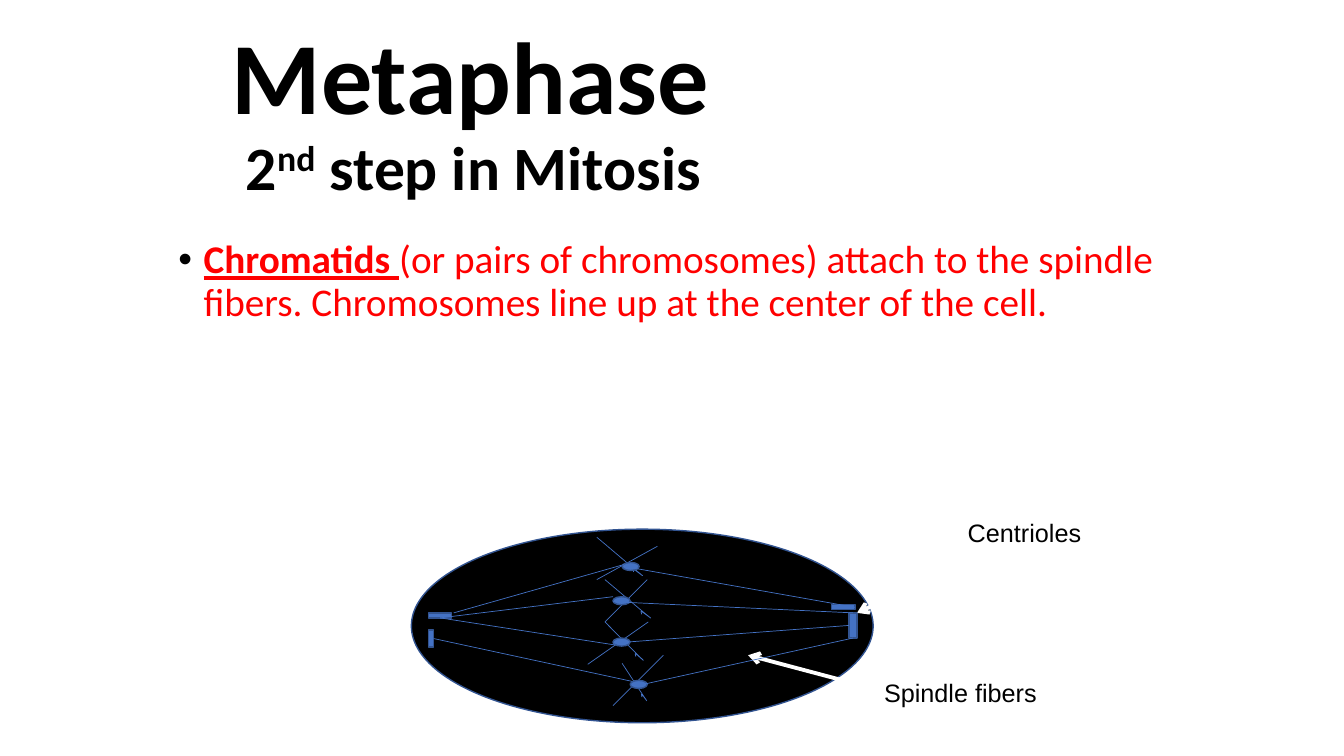
from dataclasses import dataclass
from typing import Any, Optional

from lxml.etree import SubElement
from pptx import Presentation
from pptx.dml.color import RGBColor
from pptx.enum.shapes import MSO_CONNECTOR, MSO_SHAPE as Preset
from pptx.enum.text import MSO_ANCHOR, MSO_AUTO_SIZE as AutoSize, PP_ALIGN
from pptx.oxml.ns import qn
from pptx.util import Inches, Pt

BLACK, WHITE, RED = "000000", "FFFFFF", "FF0000"
BLUE, DARK_BLUE = "4472C4", "325491"
HOOK = [(0.38, 0.38), (0.75, 0.76), (0.87, 0.87),
        (1, 1), (0.75, 0.76), (0.72, 0.75),
        (0.7, 0.74), (0.72, 0.76), (0.73, 0.82)]


@dataclass(frozen=True)
class Part:
    left: float
    top: float
    width: float
    height: float
    preset: Any = Preset.RECTANGLE
    fill: str = BLUE
    flipped: bool = False


@dataclass(frozen=True)
class Arm:
    left: float
    top: float
    width: float
    height: float
    hooked: bool


@dataclass(frozen=True)
class Fiber:
    start: tuple[float, float]
    end: tuple[float, float]
    source: Optional[tuple[str, int]] = None
    target: Optional[tuple[str, int]] = None


@dataclass(frozen=True)
class Label:
    text: str
    box: tuple[float, float, float, float]
    wraps: bool
    arrow: Fiber


CELL = Part(4.08, 5.25, 4.58, 1.92, Preset.OVAL, BLACK)
CENTRIOLES = {
    "left upright": Part(4.25, 6.25, 0.05, 0.17),
    "right flat": Part(8.25, 6, 0.23, 0.05),
    "right upright": Part(8.42, 6.08, 0.08, 0.25),
    "left flat": Part(4.25, 6.08, 0.23, 0.05),
}
CENTROMERES = [
    Part(left, top, 0.17, 0.08, Preset.FLOWCHART_CONNECTOR, flipped=flipped)
    for left, top, flipped in [(6.17, 5.58, False), (6.08, 5.92, True),
                               (6.08, 6.33, False), (6.25, 6.75, False)]
]
ARMS = [
    Arm(6.17, 6.58, 0.27, 0.41, True), Arm(6.08, 6.5, 0.5, 0.5, False),
    Arm(6, 5.75, 0.42, 0.42, False), Arm(6, 5.75, 0.5, 0.42, True),
    Arm(6, 6.17, 0.42, 0.42, True), Arm(5.83, 6.17, 0.6, 0.42, False),
    Arm(5.92, 5.42, 0.6, 0.33, False), Arm(5.92, 5.33, 0.5, 0.42, True),
]
FIBERS = [
    Fiber((4.5, 6.08), (6.19, 5.6)),
    Fiber((4.37, 6.13), (6.08, 5.92), source=("left flat", 2)),
    Fiber((4.37, 6.13), (6.11, 6.4), source=("left flat", 2)),
    Fiber((4.3, 6.33), (6.27, 6.76), source=("left upright", 3)),
    Fiber((6.25, 5.63), (8.48, 6.02), target=("right flat", 3)),
    Fiber((6.08, 5.97), (8.46, 6.08), target=("right upright", 0)),
    Fiber((6.08, 6.38), (8.42, 6.21), target=("right upright", 1)),
    Fiber((6.33, 6.8), (8.46, 6.33), target=("right upright", 2)),
]
LABELS = [
    Label("Centrioles", (9.5, 5.08, 2.17, 0.4), True, Fiber((9.58, 5.58), (8.5, 6.08))),
    Label("Spindle fibers", (8.67, 6.67, 1.73, 0.4), False, Fiber((9, 6.92), (7.42, 6.5))),
]


def paint(color_format: Any, color: str) -> None:
    color_format.rgb = RGBColor.from_string(color)


def outline(shape: Any, color: str, width: float) -> None:
    paint(shape.line.color, color)
    shape.line.width = Pt(width)


def place(shape: Any, *box: float) -> None:
    for side, length in zip(("left", "top", "width", "height"), box):
        setattr(shape, side, Inches(length))


def write(paragraph: Any, text: str, color: str, **formats: Any) -> Any:
    run = paragraph.add_run()
    run.text = text
    for attribute, value in formats.items():
        setattr(run.font, attribute, value)
    paint(run.font.color, color)
    return run


def draw_part(shapes: Any, part: Part) -> Any:
    shape = shapes.add_shape(part.preset, *map(Inches, (part.left, part.top, part.width, part.height)))
    shape.shadow.inherit = False
    shape.fill.solid()
    paint(shape.fill.fore_color, part.fill)
    outline(shape, DARK_BLUE, 1)
    if part.flipped:
        shape._element.spPr.find(qn("a:xfrm")).set("flipV", "1")
    return shape


def draw_line(shapes: Any, fiber: Fiber, color: str, width: float) -> Any:
    line = shapes.add_connector(MSO_CONNECTOR.STRAIGHT, *map(Inches, fiber.start + fiber.end))
    outline(line, color, width)
    SubElement(line._element.spPr, qn("a:effectLst"))
    return line


def draw_arm(shapes: Any, arm: Arm) -> None:
    corners = [(0, 0), *HOOK] if arm.hooked else [(1, 0), (0, 1)]
    points = [(Inches(arm.left + x * arm.width), Inches(arm.top + y * arm.height)) for x, y in corners]
    builder = shapes.build_freeform(*points[0])
    builder.add_line_segments(points[1:], close=False)
    shape = builder.convert_to_shape()
    shape.shadow.inherit = False
    shape.fill.background()
    outline(shape, BLUE, 0.5)
    if arm.hooked:
        trace = next(shape._element.iter(qn("a:path")))
        steps = trace.findall(qn("a:lnTo"))
        for first in range(0, len(steps), 3):
            curve = SubElement(trace, qn("a:cubicBezTo"))
            for step in steps[first:first + 3]:
                curve.append(step[0])
                trace.remove(step)


def draw_label(shapes: Any, label: Label) -> None:
    arrow = draw_line(shapes, label.arrow, WHITE, 2.75)
    SubElement(arrow.line._get_or_add_ln(), qn("a:tailEnd"), type="arrow")
    frame = shapes.add_textbox(*map(Inches, label.box)).text_frame
    frame.word_wrap = label.wraps
    frame.auto_size = AutoSize.SHAPE_TO_FIT_TEXT
    write(frame.paragraphs[0], label.text, BLACK, name="Arial", size=Pt(18))


def fill_title(title: Any) -> None:
    place(title, 1.67, 0.17, 10, 1.94)
    frame = title.text_frame
    frame.auto_size = AutoSize.NONE
    frame.vertical_anchor = MSO_ANCHOR.MIDDLE
    heading = frame.paragraphs[0]
    heading.alignment = PP_ALIGN.LEFT
    heading.line_spacing = 0.9
    heading._p.get_or_add_pPr().set("marL", str(Inches(0.53)))
    style = {"name": "Calibri", "bold": True}
    write(heading, "Metaphase ", BLACK, size=Pt(73), **style)
    heading.add_line_break()
    write(heading, " 2", BLACK, size=Pt(44), **style)
    ordinal = write(heading, "nd", BLACK, size=Pt(44), **style)
    ordinal._r.get_or_add_rPr().set("baseline", "30000")
    write(heading, " step in Mitosis", BLACK, size=Pt(44), **style)


def fill_body(body: Any) -> None:
    place(body, 1.67, 2.33, 10, 2.75)
    body.text_frame.auto_size = AutoSize.NONE
    fact = body.text_frame.paragraphs[0]
    fact.line_spacing = 0.9
    fact.space_before = Pt(10)
    properties = fact._p.get_or_add_pPr()
    properties.set("marL", str(Inches(0.25)))
    properties.set("indent", str(Inches(-0.25)))
    SubElement(SubElement(properties, qn("a:buClr")), qn("a:srgbClr"), val=BLACK)
    SubElement(properties, qn("a:buFont"), typeface="Arial")
    SubElement(properties, qn("a:buChar"), char="•")
    style = {"name": "Calibri", "size": Pt(28)}
    write(fact, "Chromatids ", RED, bold=True, underline=True, **style)
    write(fact, "(or pairs of chromosomes) attach to the spindle fibers. "
                "Chromosomes line up at the center of the cell.", RED, **style)


def main() -> None:
    deck = Presentation()
    deck.slide_width, deck.slide_height = Inches(13.33), Inches(7.5)
    slide = deck.slides.add_slide(deck.slide_layouts[1])
    shapes = slide.shapes
    fill_title(shapes.title)
    fill_body(slide.placeholders[1])
    draw_part(shapes, CELL)
    for label in LABELS:
        draw_label(shapes, label)
    for arm in ARMS:
        draw_arm(shapes, arm)
    centrioles = {place_name: draw_part(shapes, part) for place_name, part in CENTRIOLES.items()}
    for centromere in CENTROMERES:
        draw_part(shapes, centromere)
    for fiber in FIBERS:
        line = draw_line(shapes, fiber, BLUE, 0.5)
        for joint, connect in ((fiber.source, line.begin_connect), (fiber.target, line.end_connect)):
            if joint:
                connect(centrioles[joint[0]], joint[1])
    deck.save("out.pptx")


if __name__ == "__main__":
    main()
